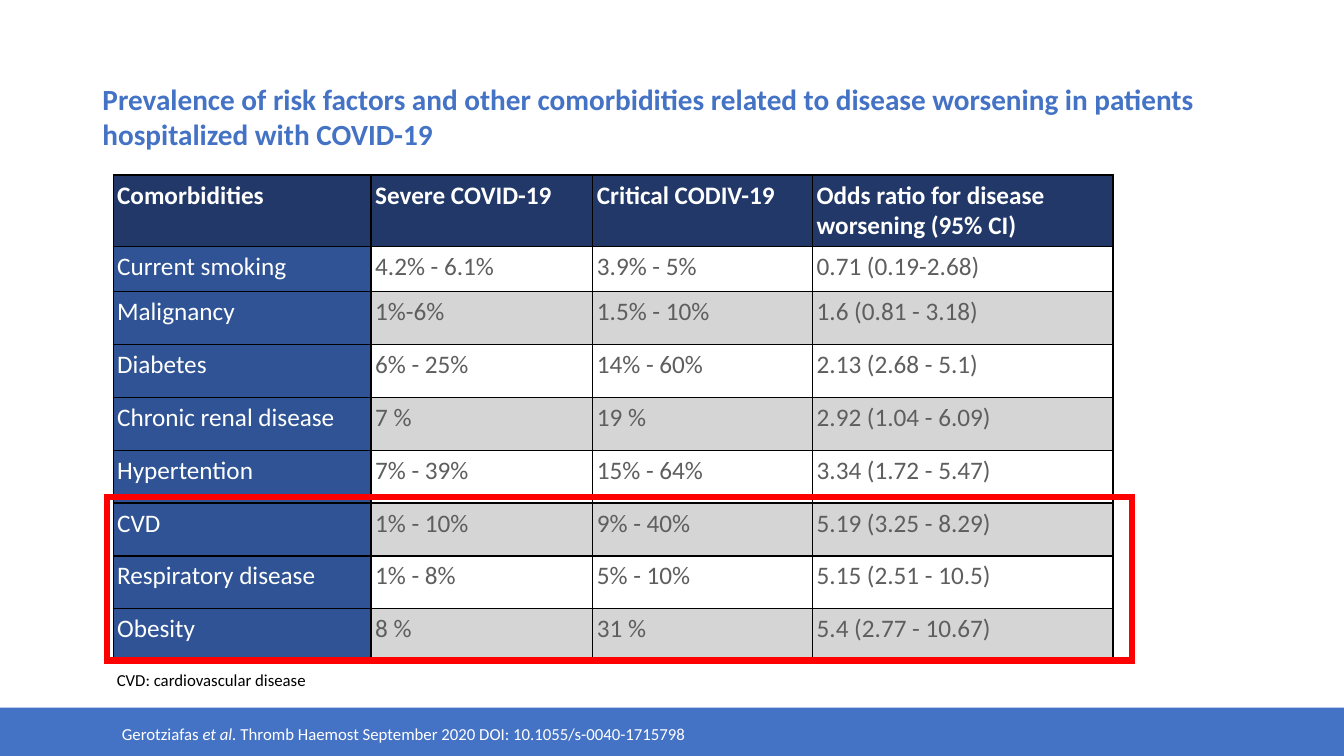
"""Build the slide on comorbidities linked to worsening COVID-19."""
from pptx import Presentation
from pptx.dml.color import RGBColor
from pptx.enum.shapes import MSO_SHAPE
from pptx.enum.text import MSO_ANCHOR, MSO_AUTO_SIZE, PP_ALIGN
from pptx.oxml import parse_xml
from pptx.oxml.ns import nsdecls
from pptx.util import Pt

BLUE = RGBColor(0x44, 0x72, 0xC4)
NAVY = RGBColor(0x21, 0x38, 0x68)
MID_BLUE = RGBColor(0x2F, 0x53, 0x94)
BAND_GREY = RGBColor(0xD6, 0xD5, 0xD5)
TEXT_GREY = RGBColor(0x5E, 0x5E, 0x5E)
WHITE = RGBColor(0xFF, 0xFF, 0xFF)
BLACK = RGBColor(0, 0, 0)
RED = RGBColor(0xFF, 0, 0)


def style_font(paragraph, size, color, bold=False):
    for run in paragraph.runs:
        run.font.name = "Calibri"
        run.font.size = Pt(size)
        run.font.color.rgb = color
        run.font.bold = bold


def set_margins(frame, horizontal, vertical):
    frame.margin_left = frame.margin_right = Pt(horizontal)
    frame.margin_top = frame.margin_bottom = Pt(vertical)


deck = Presentation()
deck.slide_width, deck.slide_height = Pt(960), Pt(540)
slide = deck.slides.add_slide(deck.slide_layouts[5])

headline = slide.shapes.title
headline.left, headline.top, headline.width, headline.height = Pt(66), Pt(28.8), Pt(828), Pt(82.8)
headline.text_frame.text = (
    "Prevalence of risk factors and other comorbidities related to disease "
    "worsening in patients hospitalized with COVID-19"
)
headline.text_frame.auto_size = MSO_AUTO_SIZE.NONE
headline.text_frame.vertical_anchor = MSO_ANCHOR.BOTTOM
headline.text_frame.word_wrap = True
set_margins(headline.text_frame, 7.2, 3.6)
headline.text_frame.paragraphs[0].alignment = PP_ALIGN.LEFT
style_font(headline.text_frame.paragraphs[0], 20.9, BLUE, bold=True)

footer_band = slide.shapes.add_shape(MSO_SHAPE.RECTANGLE, 0, Pt(505.4), Pt(960), Pt(34.6))
footer_band.shadow.inherit = False
footer_band.fill.solid()
footer_band.fill.fore_color.rgb = BLUE
footer_band.line.fill.background()

prevalence = [
    ("Comorbidities", "Severe COVID-19", "Critical CODIV-19", "Odds ratio for disease worsening (95% CI)"),
    ("Current smoking", "4.2% - 6.1%", "3.9% - 5%", "0.71 (0.19-2.68)"),
    ("Malignancy", "1%-6%", "1.5% - 10%", "1.6 (0.81 - 3.18)"),
    ("Diabetes", "6% - 25%", "14% - 60%", "2.13 (2.68 - 5.1)"),
    ("Chronic renal disease", "7 %", "19 %", "2.92 (1.04 - 6.09)"),
    ("Hypertention", "7% - 39%", "15% - 64%", "3.34 (1.72 - 5.47)"),
    ("CVD", "1% - 10%", "9% - 40%", "5.19 (3.25 - 8.29)"),
    ("Respiratory disease", "1% - 8%", "5% - 10%", "5.15 (2.51 - 10.5)"),
    ("Obesity", "8 %", "31 %", "5.4 (2.77 - 10.67)"),
]
column_widths = [184.3, 158.4, 157, 214.6]
row_heights = [43.2, 32] + [37.8] * 7

risk_table = slide.shapes.add_table(
    len(prevalence), len(column_widths), Pt(80.8), Pt(125), Pt(sum(column_widths)), Pt(sum(row_heights))
).table
risk_table.horz_banding = False
for column, width in zip(risk_table.columns, column_widths):
    column.width = Pt(width)

for row_index, (values, height) in enumerate(zip(prevalence, row_heights)):
    risk_table.rows[row_index].height = Pt(height)
    for column_index, value in enumerate(values):
        cell = risk_table.cell(row_index, column_index)
        if row_index == 0:
            cell_fill, cell_color = NAVY, WHITE
        elif column_index == 0:
            cell_fill, cell_color = MID_BLUE, WHITE
        else:
            cell_fill, cell_color = (WHITE if row_index % 2 else BAND_GREY), TEXT_GREY
        cell.text_frame.text = value
        set_margins(cell, 2.9, 3.6)
        style_font(cell.text_frame.paragraphs[0], 18, cell_color, bold=row_index == 0)
        for edge in ("lnL", "lnR", "lnT", "lnB"):
            cell._tc.get_or_add_tcPr().append(parse_xml(
                f'<a:{edge} {nsdecls("a")} w="12700"><a:solidFill>'
                f'<a:srgbClr val="{BLACK}"/></a:solidFill></a:{edge}>'
            ))
        cell.fill.solid()
        cell.fill.fore_color.rgb = cell_fill

citation = slide.shapes.add_textbox(Pt(84.2), Pt(514), Pt(473), Pt(20.2)).text_frame
citation.word_wrap = True
citation.vertical_anchor = MSO_ANCHOR.MIDDLE
set_margins(citation, 2.9, 2.9)
for part in ("Gerotziafas ", "et al. ", "Thromb Haemost September 2020 DOI: 10.1055/s-0040-1715798"):
    citation_run = citation.paragraphs[0].add_run()
    citation_run.text = part
    citation_run.font.italic = part == "et al. "
style_font(citation.paragraphs[0], 12, WHITE)

abbreviation = slide.shapes.add_textbox(Pt(76.3), Pt(475.2), Pt(149.8), Pt(21.6)).text_frame
abbreviation.word_wrap = False
set_margins(abbreviation, 7.2, 3.6)
abbreviation.text = "CVD: cardiovascular disease"
style_font(abbreviation.paragraphs[0], 12, BLACK)

highest_risk = slide.shapes.add_shape(MSO_SHAPE.RECTANGLE, Pt(76.3), Pt(355), Pt(732.2), Pt(116.9))
highest_risk.shadow.inherit = False
highest_risk.fill.background()
highest_risk.line.color.rgb = RED
highest_risk.line.width = Pt(4.5)
highest_risk.line._get_or_add_ln().append(parse_xml(f'<a:miter {nsdecls("a")} lim="800000"/>'))

deck.save("out.pptx")
